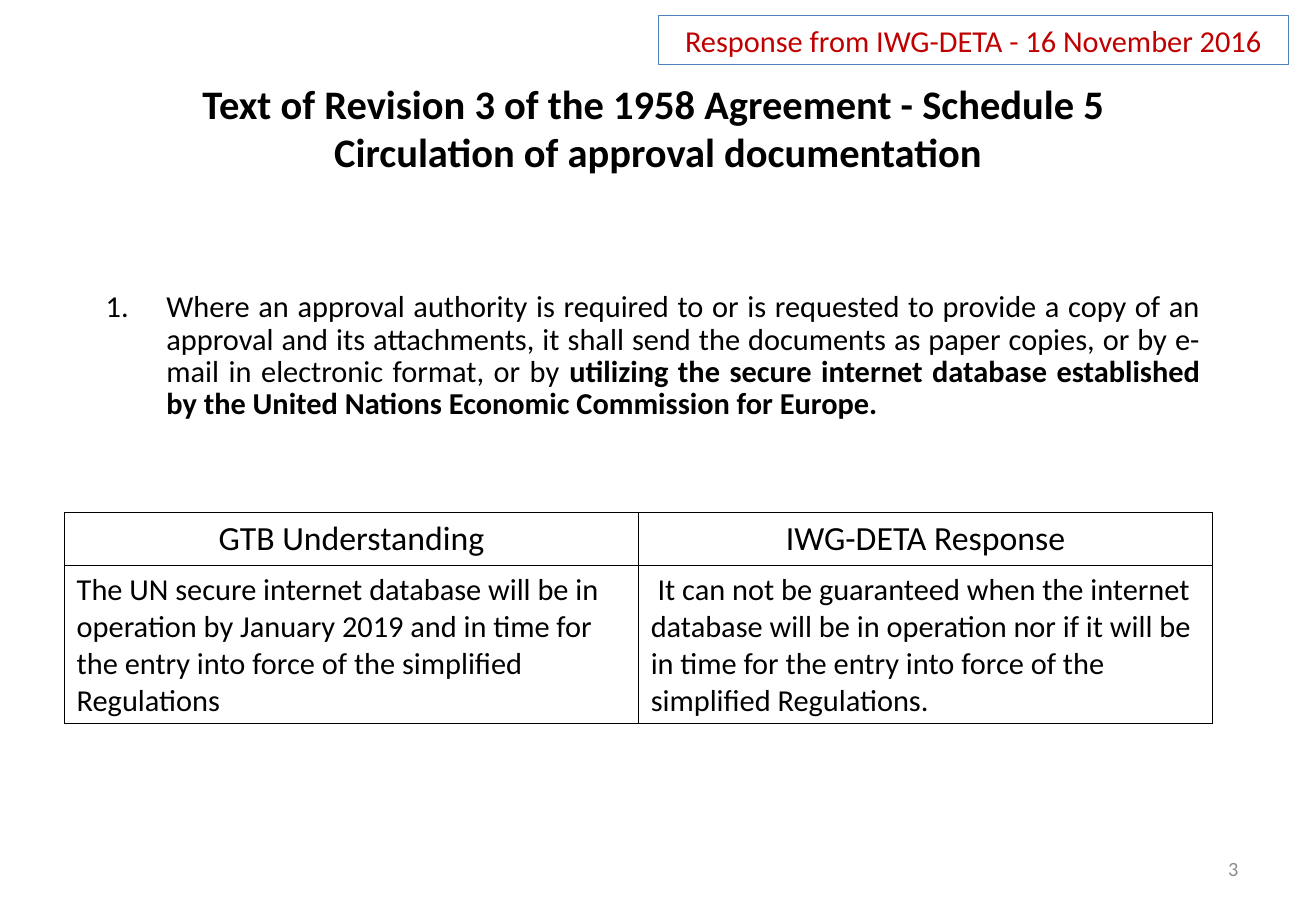
from dataclasses import dataclass

from lxml.etree import SubElement
from pptx import Presentation
from pptx.dml.color import RGBColor
from pptx.enum.shapes import MSO_SHAPE
from pptx.enum.text import MSO_ANCHOR as Anchor, MSO_AUTO_SIZE as AutoSize, PP_ALIGN as Align
from pptx.oxml.ns import qn
from pptx.util import Cm, Pt


@dataclass(frozen=True)
class Theme:
    font: str = "Calibri"
    ink: str = "000000"
    response: str = "C00000"
    outline: str = "4F81BD"
    muted: str = "8C8C8C"
    title_size: int = 24
    header_size: int = 20
    body_size: int = 18
    number_size: int = 12


class SlideBuilder:
    def __init__(self, deck, theme):
        self.theme = theme
        self.page = deck.slides.add_slide(deck.slide_layouts[5])

    def style(self, para, size, color=None, align=Align.LEFT, bold=None):
        para.alignment = align
        font = para.font
        font.name, font.size, font.bold = self.theme.font, Pt(size), bold
        font.color.rgb = RGBColor.from_string(color or self.theme.ink)

    def title(self, lines, left, top, width, height):
        box = self.page.shapes.title
        box.left, box.top, box.width, box.height = map(Cm, (left, top, width, height))
        frame = box.text_frame
        frame.text = "\n".join(lines)
        frame.word_wrap = True
        frame.auto_size = AutoSize.NONE
        frame.vertical_anchor = Anchor.TOP
        for para in frame.paragraphs:
            self.style(para, self.theme.title_size, align=Align.CENTER, bold=True)

    def text_box(self, left, top, width, height, anchor=Anchor.TOP):
        box = self.page.shapes.add_textbox(*map(Cm, (left, top, width, height)))
        frame = box.text_frame
        frame.word_wrap = True
        frame.vertical_anchor = anchor
        return frame.paragraphs[0]

    def numbered_clause(self, plain, strong, *place):
        para = self.text_box(*place)
        indent = Cm(1.27)
        properties = para._p.get_or_add_pPr()
        properties.set("marL", str(indent))
        properties.set("indent", str(-indent))
        SubElement(properties, qn("a:buFont"), typeface="+mj-lt")
        SubElement(properties, qn("a:buAutoNum"), type="arabicPeriod")
        self.style(para, self.theme.body_size, align=Align.JUSTIFY)
        para.line_spacing = Pt(19.2)
        para.space_after = Pt(6)
        para.add_run().text = plain
        span = para.add_run()
        span.text = strong
        span.font.bold = True

    def page_number(self, number, *place):
        para = self.text_box(*place, anchor=Anchor.MIDDLE)
        para.text = str(number)
        self.style(para, self.theme.number_size, self.theme.muted, Align.RIGHT)

    def label(self, text, left, top, width, height):
        box = self.page.shapes.add_shape(
            MSO_SHAPE.RECTANGLE, *map(Cm, (left, top, width, height)))
        box.shadow.inherit = False
        box.fill.background()
        box.line.color.rgb = RGBColor.from_string(self.theme.outline)
        box.line.width = Pt(0.75)
        frame = box.text_frame
        frame.word_wrap = True
        frame.vertical_anchor = Anchor.TOP
        frame.text = text
        self.style(frame.paragraphs[0], self.theme.body_size, self.theme.response, Align.CENTER)

    def border(self, cell):
        properties = cell._tc.get_or_add_tcPr()
        for side in ("lnL", "lnR", "lnT", "lnB"):
            line = SubElement(properties, qn(f"a:{side}"), w=str(Pt(1)))
            fill = SubElement(line, qn("a:solidFill"))
            SubElement(fill, qn("a:srgbClr"), val=self.theme.ink)

    def table(self, rows, heights, left, top, width):
        table = self.page.shapes.add_table(
            len(rows), len(rows[0]), *map(Cm, (left, top, width, sum(heights)))).table
        table.first_row = table.horz_banding = False
        for index, (texts, height) in enumerate(zip(rows, heights)):
            table.rows[index].height = Cm(height)
            size, align = ((self.theme.body_size, Align.LEFT) if index
                           else (self.theme.header_size, Align.CENTER))
            for cell, text in zip(table.rows[index].cells, texts):
                self.border(cell)
                cell.fill.background()
                cell.text = text
                self.style(cell.text_frame.paragraphs[0], size, align=align)


def main():
    deck = Presentation()
    deck.slide_width, deck.slide_height = Cm(27.51), Cm(19.05)
    slide = SlideBuilder(deck, Theme())
    slide.title(
        ["Text of Revision 3 of the 1958 Agreement - Schedule 5 ",
         "Circulation of approval documentation"],
        0, 1.52, 27.51, 2.31)
    slide.numbered_clause(
        "Where an approval authority is required to or is requested to provide a copy of an "
        "approval and its attachments, it shall send the documents as paper copies, or by "
        "e-mail in electronic format, or by ",
        "utilizing the secure internet database established by the United Nations Economic "
        "Commission for Europe.",
        1.96, 5.97, 23.39, 2.97)
    slide.table(
        [["GTB Understanding", "IWG-DETA Response"],
         ["The UN secure internet database will be in operation by January 2019 and in time "
          "for the entry into force of the simplified Regulations",
          " It can not be guaranteed when the internet database will be in operation nor if it "
          "will be in time for the entry into force of the simplified Regulations."]],
        [1.1, 3.3], 1.35, 10.72, 24)
    slide.label("Response from IWG-DETA - 16 November 2016", 13.77, 0.33, 13.16, 1.02)
    slide.page_number(3, 19.71, 17.65, 6.43, 1.02)
    deck.save("out.pptx")


if __name__ == "__main__":
    main()
